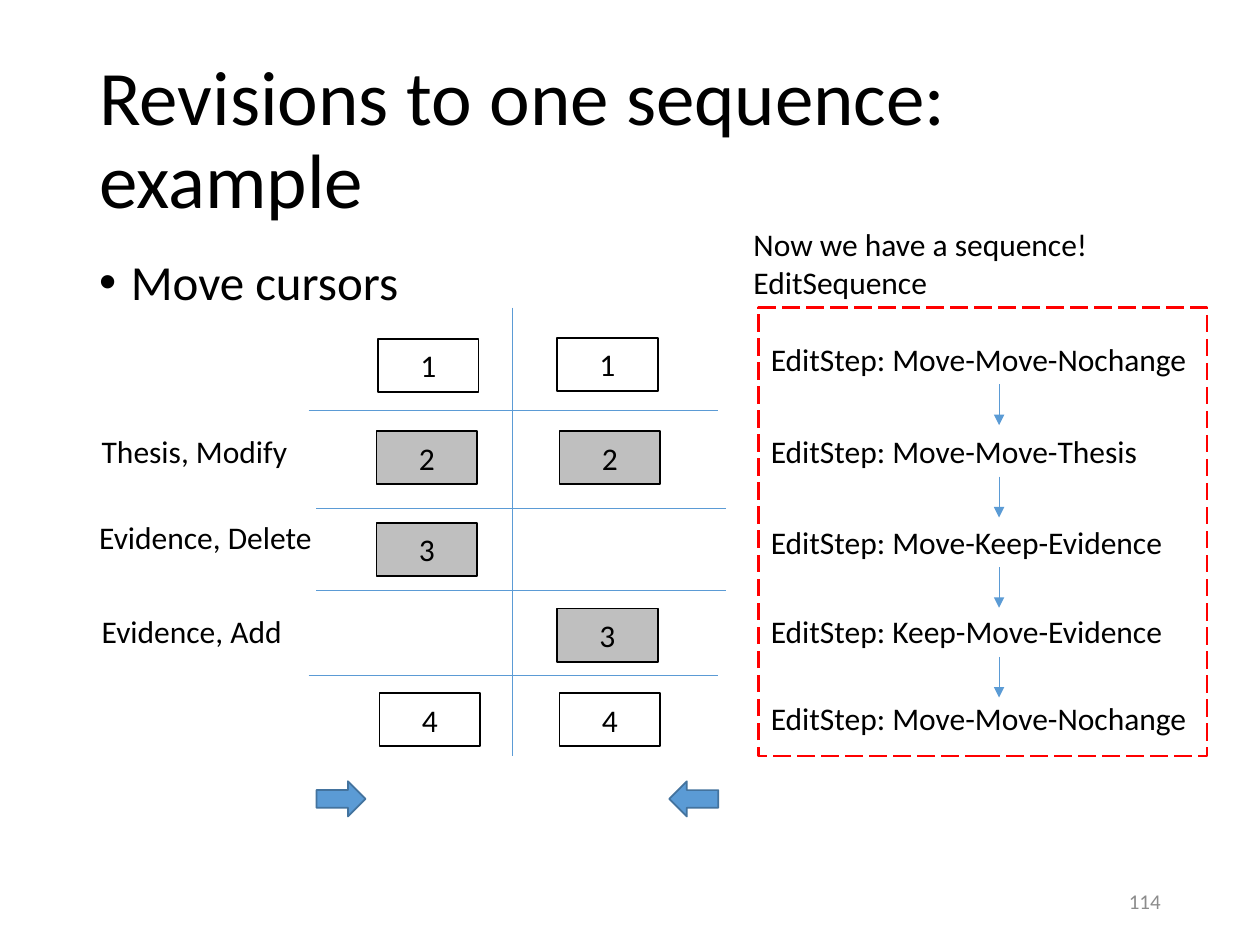
from lxml.etree import SubElement
from pptx import Presentation
from pptx.dml.color import RGBColor
from pptx.enum.dml import MSO_LINE_DASH_STYLE as Dash
from pptx.enum.shapes import MSO_CONNECTOR as Connector, MSO_SHAPE as Shape
from pptx.enum.text import MSO_ANCHOR as Anchor, MSO_AUTO_SIZE as AutoSize, PP_ALIGN as Align
from pptx.oxml.ns import qn
from pptx.util import Cm, Pt

FONT = "Calibri"
COLORS = {
    "black": "000000", "white": "FFFFFF", "grey": "BFBFBF", "number": "8C8C8C",
    "blue": "5B9BD5", "dark blue": "43739E", "red": "FF0000",
}

# All positions and sizes are in centimetres.
TITLE = "Revisions to one sequence: example"
BULLET = "Move cursors"
HEADING = ["Now we have a sequence!", "EditSequence"]
PAGE_NUMBER = "114"

SENTENCES = [  # text, left, top, fill
    ("1", 7.62, 6.83, "white"), ("1", 11.23, 6.81, "white"),
    ("2", 7.59, 8.69, "grey"), ("2", 11.28, 8.69, "grey"),
    ("3", 7.59, 10.54, "grey"), ("3", 11.23, 12.27, "grey"),
    ("4", 7.65, 13.97, "white"), ("4", 11.28, 13.97, "white"),
]
ROW_LINES = [(6.22, 8.28), (6.38, 10.24), (6.38, 11.91), (6.22, 13.61)]  # left, y
ROW_LINE_LENGTH = 8.26
REVISIONS = [  # text, left, top
    ("Thesis, Modify", 1.8, 8.59),
    ("Evidence, Delete", 1.75, 10.31),
    ("Evidence, Add", 1.8, 12.22),
]
CURSORS = [(6.38, 0), (13.49, 180)]  # left, rotation
EDIT_STEPS = [  # text, top
    ("EditStep: Move-Move-Nochange", 6.73),
    ("EditStep: Move-Move-Thesis", 8.59),
    ("EditStep: Move-Keep-Evidence", 10.41),
    ("EditStep: Keep-Move-Evidence", 12.22),
    ("EditStep: Move-Move-Nochange", 13.97),
]
LABEL_HEIGHT = 1.02
STEP_LEFT = 15.29
STEP_ARROW_X, STEP_ARROW_LENGTH = 20.14, 0.82
GRID_TOP, GRID_HEIGHT = 6.2, 9.04


def color(name):
    return RGBColor.from_string(COLORS[name])


def write(frame, lines, size=18, ink="black", align=Align.LEFT, anchor=Anchor.TOP):
    frame.word_wrap = True
    frame.auto_size = AutoSize.NONE
    frame.vertical_anchor = anchor
    for index, line in enumerate(lines):
        para = frame.add_paragraph() if index else frame.paragraphs[0]
        para.alignment = align
        span = para.add_run()
        span.text = line
        span.font.name = FONT
        span.font.size = Pt(size)
        span.font.color.rgb = color(ink)


def add_text(page, lines, left, top, width, height=LABEL_HEIGHT, **style):
    box = page.shapes.add_textbox(Cm(left), Cm(top), Cm(width), Cm(height))
    write(box.text_frame, lines, **style)
    return box


def add_shape(page, kind, left, top, width, height, fill, line, weight=1):
    shape = page.shapes.add_shape(kind, Cm(left), Cm(top), Cm(width), Cm(height))
    shape.shadow.inherit = False
    if fill:
        shape.fill.solid()
        shape.fill.fore_color.rgb = color(fill)
    else:
        shape.fill.background()
    shape.line.color.rgb = color(line)
    shape.line.width = Pt(weight)
    return shape


def add_line(page, x1, y1, x2, y2, arrow=False):
    line = page.shapes.add_connector(Connector.STRAIGHT, Cm(x1), Cm(y1), Cm(x2), Cm(y2))
    line.line.color.rgb = color("blue")
    line.line.width = Pt(0.5)
    if arrow:
        SubElement(line.line._get_or_add_ln(), qn("a:tailEnd"), type="triangle")
    SubElement(line._element.spPr, qn("a:effectLst"))


def add_title_and_bullet(page):
    title = page.shapes.title
    title.left, title.top, title.width, title.height = Cm(1.75), Cm(1.02), Cm(21.89), Cm(3.68)
    write(title.text_frame, [TITLE], size=44, anchor=Anchor.MIDDLE)
    title.text_frame.paragraphs[0].line_spacing = 0.9

    body = add_text(page, [BULLET], 1.75, 5.08, 21.89, 12.09, size=28)
    para = body.text_frame.paragraphs[0]
    para.line_spacing = 0.9
    para.space_before = Pt(10)
    properties = para._p.get_or_add_pPr()
    properties.set("marL", str(Cm(0.64)))
    properties.set("indent", str(-Cm(0.64)))
    SubElement(properties, qn("a:buFont"), typeface="Arial")
    SubElement(properties, qn("a:buChar"), char="•")


def add_alignment_grid(page):
    for text, left, top, fill in SENTENCES:
        box = add_shape(page, Shape.RECTANGLE, left, top, 2.03, 1.07, fill, "black")
        write(box.text_frame, [text], align=Align.CENTER, anchor=Anchor.MIDDLE)
    add_line(page, 10.34, GRID_TOP, 10.34, GRID_TOP + GRID_HEIGHT)
    for left, y in ROW_LINES:
        add_line(page, left, y, left + ROW_LINE_LENGTH, y)
    for text, left, top in REVISIONS:
        add_text(page, [text], left, top, 6.53)
    for left, rotation in CURSORS:
        cursor = add_shape(page, Shape.RIGHT_ARROW, left, 15.75, 0.99, 0.71, "blue", "dark blue")
        cursor.rotation = rotation


def add_edit_sequence(page):
    for text, top in EDIT_STEPS:
        add_text(page, [text], STEP_LEFT, top, 9.7)
    frame = add_shape(page, Shape.RECTANGLE, STEP_LEFT, GRID_TOP, 9.04, GRID_HEIGHT,
                      None, "red", 1.25)
    frame.line.dash_style = Dash.LONG_DASH
    add_text(page, HEADING, 14.94, 4.42, 9.42, 1.8)
    for _, top in EDIT_STEPS[:-1]:
        start = top + LABEL_HEIGHT
        add_line(page, STEP_ARROW_X, start, STEP_ARROW_X, start + STEP_ARROW_LENGTH, arrow=True)


def main():
    deck = Presentation()
    deck.slide_width, deck.slide_height = Cm(25.4), Cm(19.05)
    page = deck.slides.add_slide(deck.slide_layouts[5])
    add_title_and_bullet(page)
    add_alignment_grid(page)
    add_edit_sequence(page)
    add_text(page, [PAGE_NUMBER], 17.93, 17.65, 5.72, size=12, ink="number",
             align=Align.RIGHT, anchor=Anchor.MIDDLE)
    deck.save("out.pptx")


if __name__ == "__main__":
    main()
